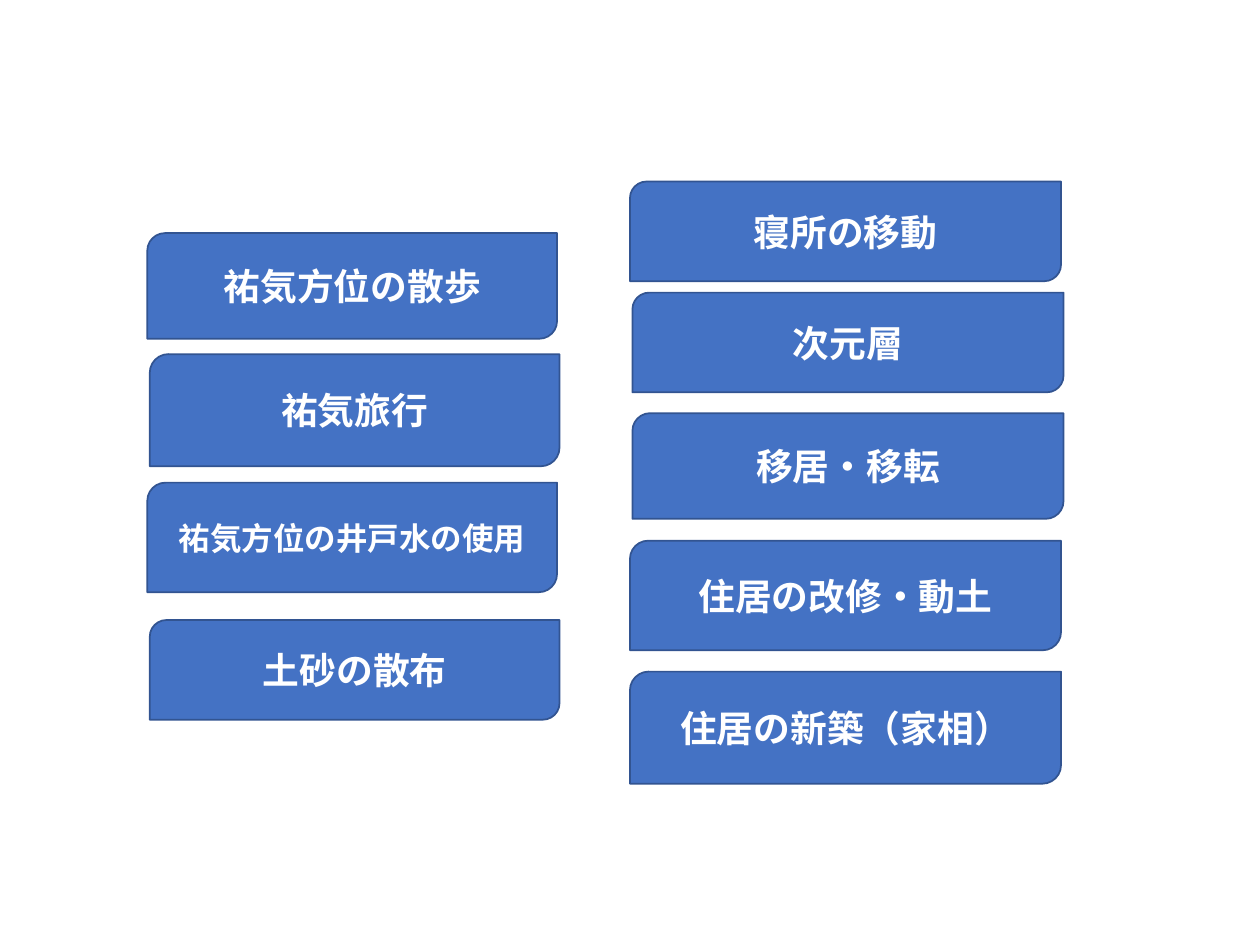
from dataclasses import dataclass

from pptx import Presentation
from pptx.dml.color import RGBColor
from pptx.enum.shapes import MSO_SHAPE as Preset
from pptx.enum.text import MSO_ANCHOR as Anchor, PP_ALIGN as Align
from pptx.util import Cm, Pt


@dataclass(frozen=True)
class Theme:
    """Colours, font and sizes of the slide."""
    fill: RGBColor = RGBColor(0x44, 0x72, 0xC4)
    outline: RGBColor = RGBColor(0x32, 0x54, 0x91)
    text: RGBColor = RGBColor(0xFF, 0xFF, 0xFF)
    font: str = "Calibri"
    body: float = 21
    small: float = 18
    line: float = 1


THEME = Theme()

NEARBY_PRACTICES = [
    ("祐気方位の散歩", 0, 0, 2.13, THEME.body),
    ("祐気旅行", 0.05, 2.44, 2.26, THEME.body),
    ("祐気方位の井戸水の使用", 0, 5.03, 2.21, THEME.small),
    ("土砂の散布", 0.05, 7.8, 2.01, THEME.body),
]
HOME_PRACTICES = [
    ("寝所の移動", 0, 0, 2.01, THEME.body),
    ("次元層", 0.05, 2.24, 2.01, THEME.body),
    ("移居・移転", 0.05, 4.67, 2.13, THEME.body),
    ("住居の改修・動土", 0, 7.24, 2.21, THEME.body),
    ("住居の新築（家相）", 0, 9.88, 2.26, THEME.body),
]


def write_text(frame, text, size=THEME.body, color=THEME.text, bold=True):
    """Write one centred line in the given format."""
    frame.word_wrap = True
    frame.vertical_anchor = Anchor.MIDDLE
    paragraph = frame.paragraphs[0]
    paragraph.alignment = Align.CENTER
    run = paragraph.add_run()
    run.text = text
    run.font.name = THEME.font
    run.font.size = Pt(size)
    run.font.bold = bold
    run.font.color.rgb = color


def add_practice_column(slide, left, top, width, practices):
    """Place a column of practice cards relative to its top left corner."""
    for label, indent, offset, height, size in practices:
        card = slide.shapes.add_shape(
            Preset.ROUND_2_DIAG_RECTANGLE,
            Cm(left + indent), Cm(top + offset), Cm(width), Cm(height))
        card.shadow.inherit = False
        card.fill.solid()
        card.fill.fore_color.rgb = THEME.fill
        card.line.color.rgb = THEME.outline
        card.line.width = Pt(THEME.line)
        write_text(card.text_frame, label, size=size)


def main():
    """Build and save the slide."""
    deck = Presentation()
    deck.slide_width, deck.slide_height = Cm(25.4), Cm(19.05)
    slide = deck.slides.add_slide(deck.slide_layouts[6])
    add_practice_column(slide, 2.97, 4.7, 8.26, NEARBY_PRACTICES)
    add_practice_column(slide, 12.7, 3.66, 8.69, HOME_PRACTICES)
    deck.save("out.pptx")


if __name__ == "__main__":
    main()
